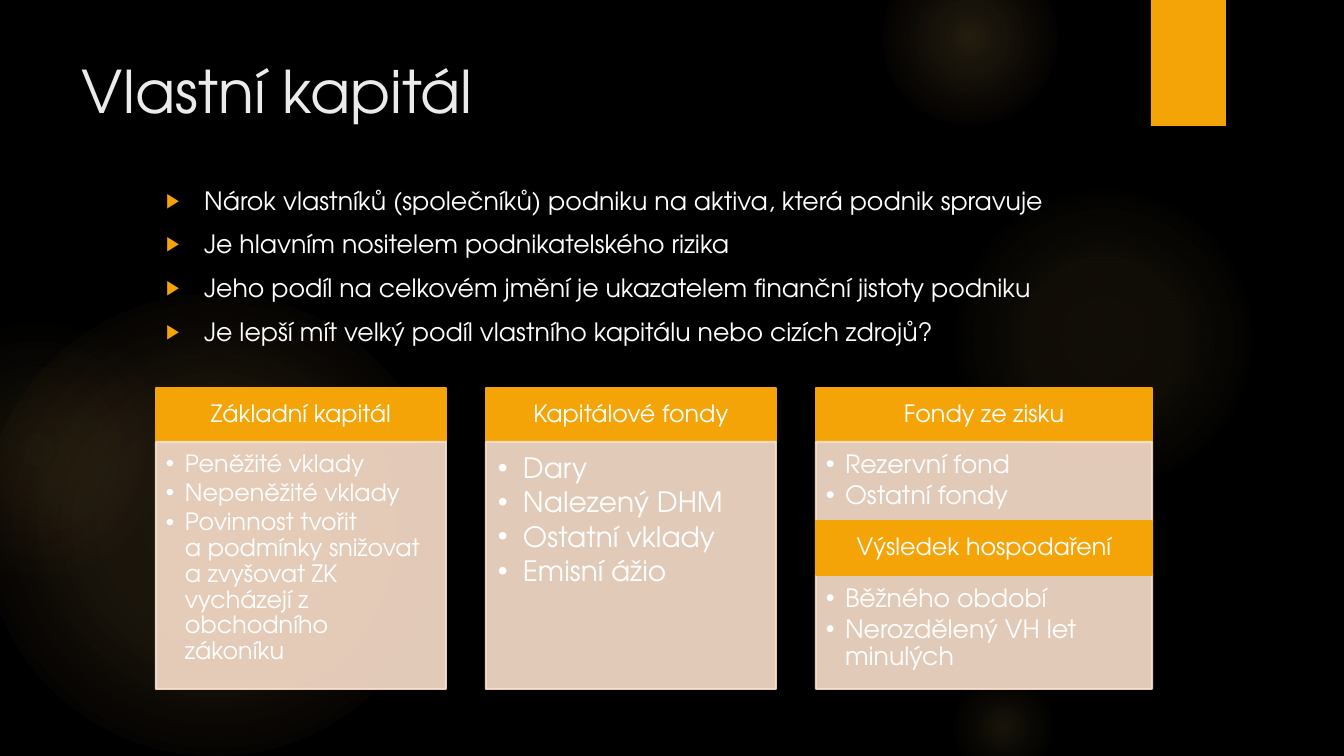
"""Build the slide on equity capital and its components."""
import pptx
import pptx.dml.color
import pptx.enum.shapes
import pptx.enum.text
import pptx.oxml
import pptx.oxml.ns
import pptx.util

FONT = "TeX Gyre Adventor"
ORANGE, CREAM, WHITE, GLOW = "F5A408", "FBE0CC", "FFFFFF", "FAC96A"
EMU_PER_PX = 914400 / 100.8

TITLE = "Vlastní kapitál"
POINTS = [
    "Nárok vlastníků (společníků) podniku na aktiva, která podnik spravuje",
    "Je hlavním nositelem podnikatelského rizika",
    "Jeho podíl na celkovém jmění je ukazatelem finanční jistoty podniku",
    "Je lepší mít velký podíl vlastního kapitálu nebo cizích zdrojů?",
]
# heading, width, text size, indent, insets, items as (text, space before in points)
COLUMNS = [
    ("Základní kapitál", 290, 17, 19, (10, 10, 13, 15), [
        ("Peněžité vklady", 0),
        ("Nepeněžité vklady", 0),
        ("Povinnost tvořit\na podmínky snižovat\na zvyšovat ZK vycházejí z obchodního zákoníku", 0),
    ]),
    ("Kapitálové fondy", 290, 20, 25, (12, 12, 16, 17), [
        ("Dary", 0), ("Nalezený DHM", 0), ("Ostatní vklady", 0), ("Emisní ážio", 0),
    ]),
    ("Fondy ze zisku", 336, 18, 19, (10, 10, 14, 16), [
        ("Rezervní fond", 0),
        ("Ostatní fondy", 0),
        ("Běžného období", 51),
        ("Nerozdělený VH let minulých", 0),
    ]),
]
RESULT, RESULT_TOP = "Výsledek hospodaření", 521
# left, top, diameter, gradient stops as (position %, colour, opacity %)
GLOWS = [
    (-17, 294, 462, [(0, GLOW, 11), (36, GLOW, 10), (75, GLOW, 0)]),
    (-93, 320, 260, [(0, GLOW, 8), (36, GLOW, 5), (71, "F59B74", 0)]),
    (949, 184, 310, [(0, GLOW, 7), (36, GLOW, 6), (69, GLOW, 0)]),
    (882, -50, 176, [(0, GLOW, 14), (36, GLOW, 7), (73, GLOW, 0)]),
    (949, 672, 109, [(0, GLOW, 10), (31, GLOW, 5), (66, GLOW, 0)]),
]
LEFT, TOP, GAP, HEAD_H, PANEL_H = 156, 388, 40, 54, 247


def px(n):
    return pptx.util.Emu(round(n * EMU_PER_PX))


def rgb(color):
    return pptx.dml.color.RGBColor.from_string(color)


def element(tag, attributes="", content=""):
    return pptx.oxml.parse_xml(
        f'<a:{tag} {pptx.oxml.ns.nsdecls("a")} {attributes}>{content}</a:{tag}>')


def add_glow(s, left, top, size, stops):
    sp = s.shapes.add_shape(pptx.enum.shapes.MSO_SHAPE.OVAL, px(left), px(top), px(size), px(size))
    sp.shadow.inherit = False
    sp.line.fill.background()
    marks = "".join(f'<a:gs pos="{pos * 1000}"><a:srgbClr val="{color}">'
                    f'<a:alpha val="{alpha * 1000}"/></a:srgbClr></a:gs>'
                    for pos, color, alpha in stops)
    sp.element.spPr.insert(2, element(
        "gradFill", "", f'<a:gsLst>{marks}</a:gsLst><a:path path="circle">'
        '<a:fillToRect l="50000" t="50000" r="50000" b="50000"/></a:path>'))


def add_box(s, left, top, width, height, color, alpha=100):
    sp = s.shapes.add_shape(pptx.enum.shapes.MSO_SHAPE.RECTANGLE,
                            px(left), px(top), px(width), px(height))
    sp.shadow.inherit = False
    sp.fill.solid()
    sp.fill.fore_color.rgb = rgb(color)
    sp.line.color.rgb = rgb(color)
    sp.line.width = pptx.util.Pt(1.5)
    if alpha < 100:
        for node in sp.element.spPr.iter(pptx.oxml.ns.qn("a:srgbClr")):
            node.append(element("alpha", f'val="{alpha * 1000}"'))
    return sp


def set_frame(tf, insets, anchor=pptx.enum.text.MSO_ANCHOR.TOP):
    tf.word_wrap = True
    tf.vertical_anchor = anchor
    tf.margin_left, tf.margin_top, tf.margin_right, tf.margin_bottom = map(px, insets)


def add_text(tf, text, size, color=WHITE, align=pptx.enum.text.PP_ALIGN.LEFT,
             line=1.0, before=0, after=0):
    p = tf.add_paragraph() if tf.paragraphs[0].runs else tf.paragraphs[0]
    p.alignment, p.line_spacing = align, line
    p.space_before, p.space_after = pptx.util.Pt(before), pptx.util.Pt(after)
    for i, part in enumerate(text.split("\n")):
        if i:
            p.add_line_break()
        r = p.add_run()
        r.text = part
        r.font.name, r.font.size = FONT, pptx.util.Pt(size)
        r.font.color.rgb = rgb(color)
    return p


def add_bullet(p, char, indent, color, percent=100):
    pPr = p._p.get_or_add_pPr()
    pPr.set("marL", str(px(indent)))
    pPr.set("indent", str(-px(indent)))
    pPr.append(element("buClr", "", f'<a:srgbClr val="{color}"/>'))
    pPr.append(element("buSzPct", f'val="{percent * 1000}"'))
    pPr.append(element("buFont", 'typeface="Arial"'))
    pPr.append(element("buChar", f'char="{char}"'))


def add_heading(s, left, top, width, text):
    tf = add_box(s, left, top, width, HEAD_H, ORANGE).text_frame
    set_frame(tf, (13, 8, 13, 8), pptx.enum.text.MSO_ANCHOR.MIDDLE)
    add_text(tf, text, 17, align=pptx.enum.text.PP_ALIGN.CENTER, line=0.9)


def add_textbox(s, left, top, width, height):
    tf = s.shapes.add_textbox(px(left), px(top), px(width), px(height)).text_frame
    set_frame(tf, (10, 5, 10, 5))
    return tf


def main():
    prs = pptx.Presentation()
    prs.slide_width, prs.slide_height = px(1344), px(756)
    s = prs.slides.add_slide(prs.slide_layouts[6])
    s.background.fill.solid()
    s.background.fill.fore_color.rgb = rgb("000000")

    for glow in GLOWS:
        add_glow(s, *glow)
    add_box(s, 1151, 0, 75, 126, ORANGE).line.fill.background()

    add_text(add_textbox(s, 72, 50, 1037, 81), TITLE, 42, "EBEBEB", after=6)
    tf = add_textbox(s, 156, 180, 969, 200)
    for point in POINTS:
        add_bullet(add_text(tf, point, 18, before=3.6, after=6), "▶", 38, ORANGE, 80)

    left = LEFT
    for heading, width, size, indent, insets, items in COLUMNS:
        add_heading(s, left, TOP, width, heading)
        tf = add_box(s, left, TOP + HEAD_H, width, PANEL_H, CREAM, 90).text_frame
        set_frame(tf, insets)
        for text, before in items:
            p = add_text(tf, text, size, line=0.9, before=before, after=round(size * 0.15, 1))
            add_bullet(p, "•", indent, WHITE)
        left += width + GAP
    add_heading(s, left - width - GAP, RESULT_TOP, width, RESULT)

    prs.save("out.pptx")


if __name__ == "__main__":
    main()
